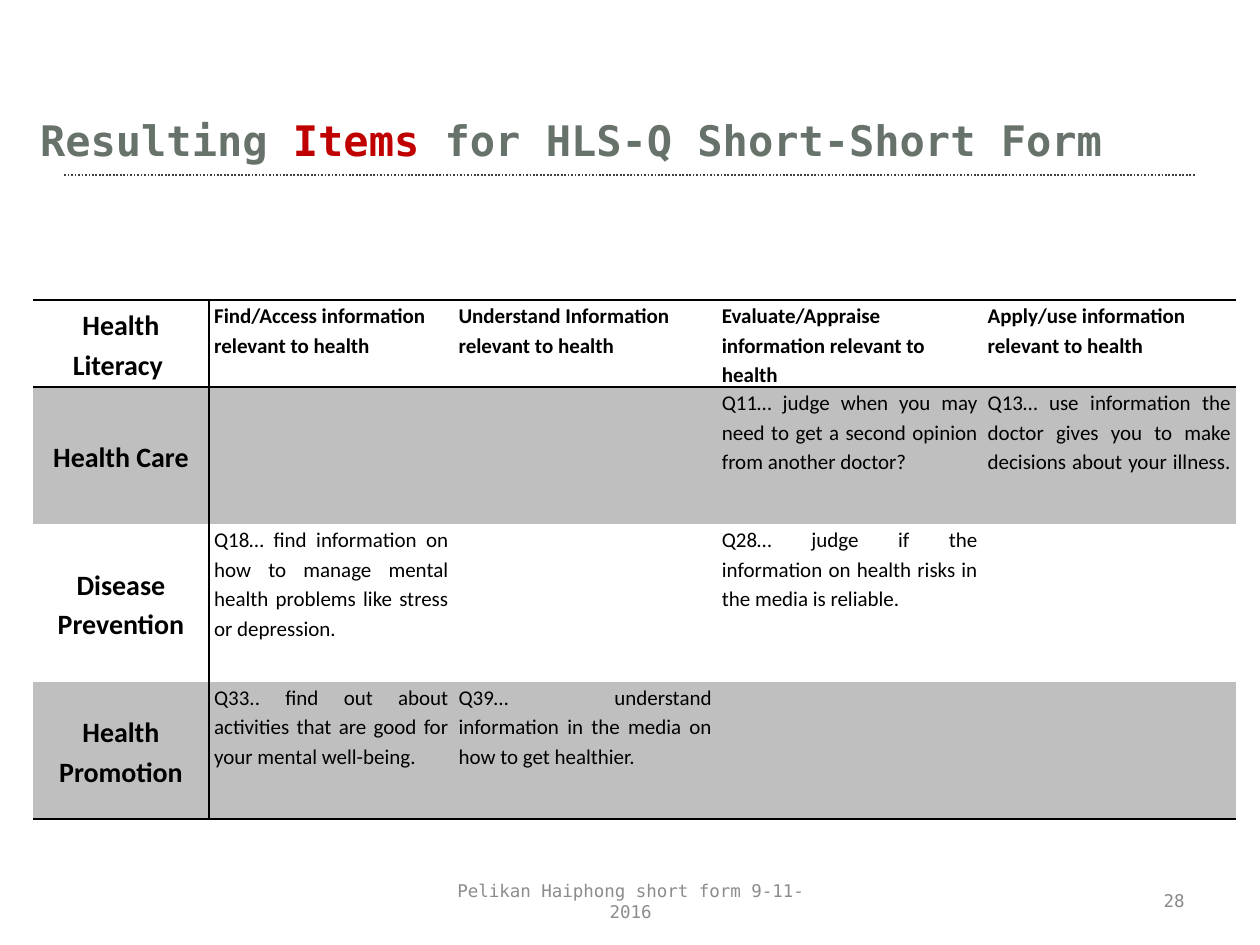
from lxml import etree
from pptx import Presentation
from pptx.dml.color import RGBColor
from pptx.enum.dml import MSO_LINE
from pptx.enum.shapes import MSO_CONNECTOR
from pptx.enum.text import MSO_ANCHOR, PP_ALIGN
from pptx.oxml.ns import qn
from pptx.util import Inches, Pt

LEFT, CENTER, RIGHT, JUSTIFY = PP_ALIGN.LEFT, PP_ALIGN.CENTER, PP_ALIGN.RIGHT, PP_ALIGN.JUSTIFY
TOP, MIDDLE = MSO_ANCHOR.TOP, MSO_ANCHOR.MIDDLE
DOTTED, STRAIGHT = MSO_LINE.ROUND_DOT, MSO_CONNECTOR.STRAIGHT
MONO, SANS = "DejaVu Sans Mono", "Calibri"
BLACK, SLATE, RED, BAND, WHITE = "000000", "67726B", "C00000", "BFBFBF", "FFFFFF"

COLUMN_WIDTHS = [1.4, 1.94, 2.09, 2.11, 2.01]
ROW_HEIGHTS = [0.62, 1.09, 1.25, 1.09]
ITEMS = [
    ["Health Literacy ", "Find/Access information relevant to health",
     "Understand Information relevant to health",
     "Evaluate/Appraise  information relevant to health",
     "Apply/use information relevant to health"],
    ["Health Care", "", "",
     "Q11… judge when you may need to get a second opinion from another doctor?",
     "Q13… use information the doctor gives you to make decisions about your illness. "],
    ["Disease Prevention",
     "Q18… find information on how to manage mental health problems like stress or depression.",
     "", "Q28… judge if the information on health risks in the media is reliable. ", ""],
    ["Health Promotion",
     "Q33.. find out about activities that are good for your mental well-being.",
     "Q39… understand information in the media on how to get healthier.", "", ""],
]


def color(hex_code):
    """Return the colour for a hex string."""
    return RGBColor.from_string(hex_code)


def write(frame, *parts, size, font, align=LEFT, bold=False, spacing=None):
    """Fill a text frame with one paragraph of (text, colour) parts."""
    frame.word_wrap = True
    paragraph = frame.paragraphs[0]
    paragraph.alignment = align
    if spacing:
        paragraph.line_spacing = spacing
    for text, hex_code in parts:
        run = paragraph.add_run()
        run.text = text
        run.font.size, run.font.name, run.font.bold = Pt(size), font, bold
        run.font.color.rgb = color(hex_code)


def add_text(slide, box, *parts, **text_format):
    """Place a vertically centred text box."""
    frame = slide.shapes.add_textbox(*map(Inches, box)).text_frame
    frame.vertical_anchor = MIDDLE
    write(frame, *parts, **text_format)


def add_title(slide, box):
    """Place the heading and the dotted rule under it."""
    add_text(slide, box, ("Resulting ", SLATE), ("Items", RED),
             (" for HLS-Q Short-Short Form", SLATE), size=24, font=MONO, bold=True)
    rule_y = Inches(box[1] + 0.59)
    rule = slide.shapes.add_connector(STRAIGHT, Inches(0.51), rule_y, Inches(9.49), rule_y)
    rule.line.color.rgb = color("404040")
    rule.line.width = Pt(1)
    rule.line.dash_style = DOTTED
    etree.SubElement(rule._element.spPr, qn("a:effectLst"))


def set_borders(cell, widths):
    """Draw the cell sides that have a width and hide the others."""
    properties = cell._tc.get_or_add_tcPr()
    for position, side in enumerate("LRTB"):
        line = etree.Element(qn(f"a:ln{side}"))
        properties.insert(position, line)
        if side in widths:
            line.set("w", str(Pt(widths[side])))
            fill = etree.SubElement(line, qn("a:solidFill"))
            etree.SubElement(fill, qn("a:srgbClr"), val=BLACK)
        else:
            etree.SubElement(line, qn("a:noFill"))


def border_widths(row, column):
    """Return the ruled sides of a cell by its place in the grid."""
    widths = {}
    if column < 2:
        widths["RL"[column]] = 1
    if row == 0:
        widths.update(T=1, B=1.5)
    elif row == 1:
        widths["T"] = 1.5
    elif row == len(ITEMS) - 1:
        widths["B"] = 1.5
    return widths


def fill_cell(cell, text, row, column):
    """Format one cell as a row label, column heading or item."""
    is_label, is_heading = column == 0, row == 0
    cell.margin_left = cell.margin_right = Inches(0.04)
    cell.margin_top = cell.margin_bottom = 0
    cell.vertical_anchor = MIDDLE if is_label else TOP
    cell.fill.solid()
    cell.fill.fore_color.rgb = color(BAND if row % 2 else WHITE)
    set_borders(cell, border_widths(row, column))
    if text:
        write(cell.text_frame, (text, BLACK), size=16 if is_label else 12, font=SANS,
              align=CENTER if is_label else LEFT if is_heading else JUSTIFY,
              bold=is_label or is_heading, spacing=1.15)


def add_item_table(slide, left, top):
    """Place the matrix of health literacy items."""
    frame = slide.shapes.add_table(
        len(ROW_HEIGHTS), len(COLUMN_WIDTHS), Inches(left), Inches(top),
        Inches(sum(COLUMN_WIDTHS)), Inches(sum(ROW_HEIGHTS)))
    table = frame.table
    table.first_row = table.horz_banding = False
    for column, width in zip(table.columns, COLUMN_WIDTHS):
        column.width = Inches(width)
    for row, height in zip(table.rows, ROW_HEIGHTS):
        row.height = Inches(height)
    for row, texts in enumerate(ITEMS):
        for column, text in enumerate(texts):
            fill_cell(table.cell(row, column), text, row, column)


def add_footer(slide, top, height):
    """Place the event name and the page number."""
    add_text(slide, (3.42, top, 3.17, height), ("Pelikan Haiphong short form 9-11-2016", "8C8C8C"),
             size=10, font=MONO, align=CENTER)
    add_text(slide, (7.17, top, 2.33, height), ("28", "898989"),
             size=10, font=MONO, align=RIGHT)


def main():
    """Build the slide and save it."""
    deck = Presentation()
    deck.slide_width, deck.slide_height = Inches(10), Inches(7.5)
    slide = deck.slides.add_slide(deck.slide_layouts[6])
    add_title(slide, (0.22, 0.8, 9.47, 0.61))
    add_item_table(slide, 0.26, 2.38)
    add_footer(slide, 6.95, 0.4)
    deck.save("out.pptx")


if __name__ == "__main__":
    main()
